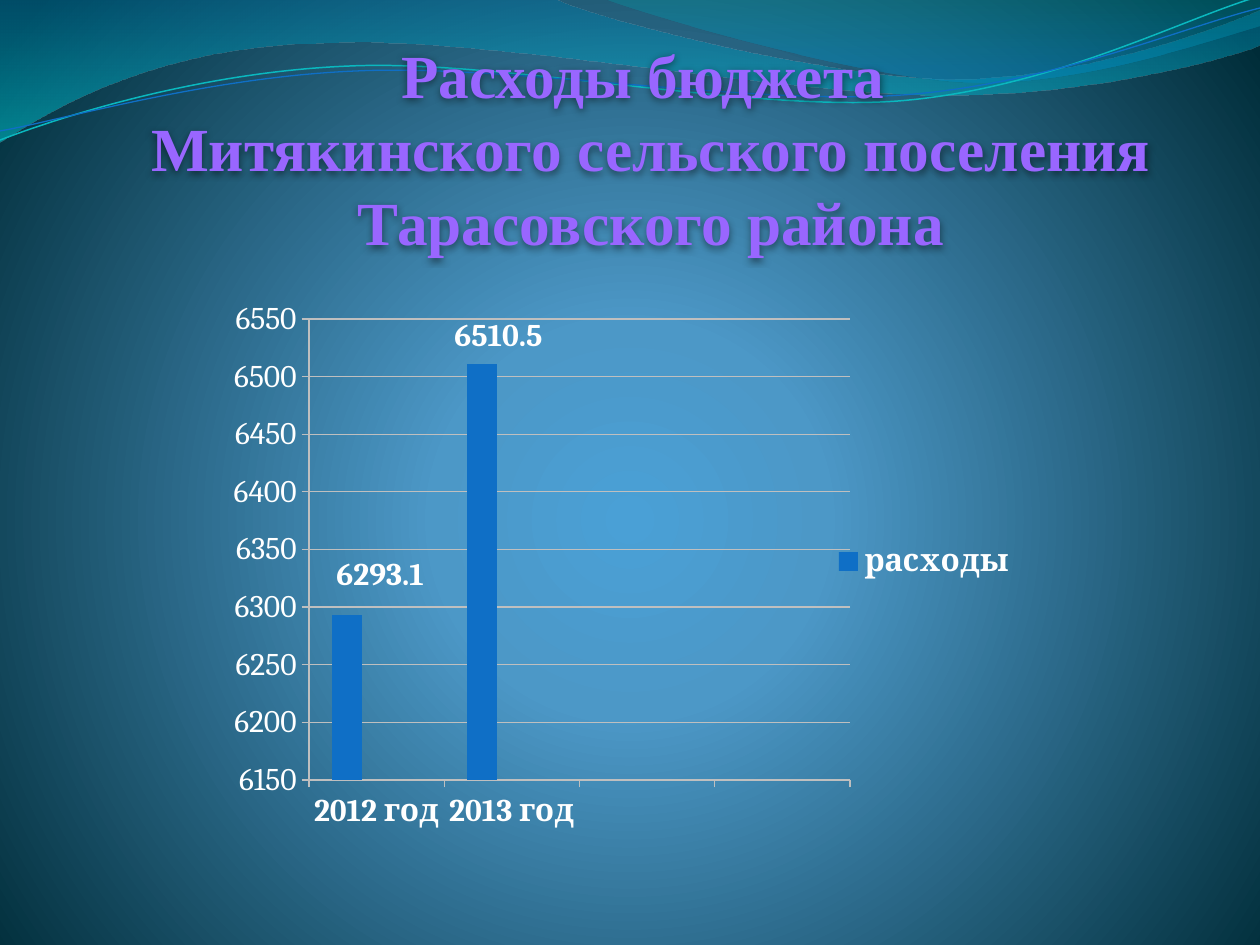
from lxml import etree
from pptx import Presentation
from pptx.chart.data import CategoryChartData
from pptx.dml.color import RGBColor
from pptx.enum.chart import XL_CHART_TYPE, XL_LABEL_POSITION, XL_LEGEND_POSITION, XL_TICK_MARK
from pptx.enum.text import MSO_ANCHOR, PP_ALIGN
from pptx.oxml import parse_xml
from pptx.oxml.ns import nsdecls, qn
from pptx.util import Pt

COLUMNS = XL_CHART_TYPE.COLUMN_CLUSTERED
OUTSIDE_END = XL_LABEL_POSITION.OUTSIDE_END
LEGEND_RIGHT = XL_LEGEND_POSITION.RIGHT
TICK_OUTSIDE = XL_TICK_MARK.OUTSIDE
CENTER = PP_ALIGN.CENTER
TOP = MSO_ANCHOR.TOP

PX = 914400 // 126
CHART_WIDTH, CHART_HEIGHT = 840, 559
COLORS = {
    "glow": "4AA0D6", "mid": "4C98C7", "edge": "002C38",
    "wave_blue": "0074A1", "wave_cyan": "00C6CF",
    "crest_teal": "00A1A9", "crest_blue": "008BBF",
    "thread_teal": "0AB8BF", "blue": "0F6FC6",
    "sky": "009DD9", "aqua": "0BD0D9",
    "title": "9966FF", "text": "FFFFFF", "grid": "BFBFBF", "shadow": "000000",
}

# Each step is a line end (2 numbers) or a cubic curve (6 numbers), in px
WAVE = [(0, 0), (554, -1), (600, 21, 837, 79, 955, 79), (1074, 79, 1207, 33, 1260, 11),
        (1261, 45), (1239, 55, 1096, 96, 940, 95), (784, 95, 481, 35, 324, 43),
        (163, 45, 58, 105, -1, 142)]
CREST = [(604, -1), (641, 14, 859, 78, 969, 82), (1079, 86, 1211, 40, 1260, 26), (1260, 0)]
TEAL_THREAD = [(0, 140), (60, 117, 199, 72, 349, 66), (498, 59, 747, 112, 898, 101),
               (1050, 89, 1182, 19, 1257, -3)]
BLUE_THREAD = [(0, 131), (59, 121, 207, 77, 357, 71), (508, 64, 752, 106, 903, 95),
               (1053, 84, 1186, 26, 1260, 8)]


def rgb(name):
    return RGBColor.from_string(COLORS[name])


def gradient_xml(stops, direction):
    """Stops are (position %, colour name, opacity %)."""
    marks = "".join(
        f'<a:gs pos="{pos * 1000}"><a:srgbClr val="{COLORS[name]}">'
        f'<a:alpha val="{opacity * 1000}"/></a:srgbClr></a:gs>'
        for pos, name, opacity in stops)
    return (f'<a:gradFill {nsdecls("a")} rotWithShape="1"><a:gsLst>{marks}</a:gsLst>'
            f'{direction}</a:gradFill>')


def set_background(slide):
    glow = gradient_xml(
        [(0, "glow", 100), (25, "mid", 100), (100, "edge", 100)],
        '<a:path path="circle"><a:fillToRect l="10000" t="110000" r="10000" b="100000"/></a:path>')
    background = parse_xml(f'<p:bg {nsdecls("p", "a")}><p:bgPr>{glow}<a:effectLst/></p:bgPr></p:bg>')
    slide.element.cSld.insert(0, background)


def add_outline(slide, steps, closed):
    """Lay out the end points, then bend the curved steps."""
    ends = [step[-2:] for step in steps]
    left, top = (min(axis) for axis in zip(*ends))
    builder = slide.shapes.build_freeform(*ends[0], scale=PX)
    builder.add_line_segments(ends[1:], close=closed)
    outline = builder.convert_to_shape()
    outline.shadow.inherit = False
    for segment, step in zip(list(outline.element.iter(qn("a:lnTo"))), steps[1:]):
        if len(step) == 6:
            segment.tag = qn("a:cubicBezTo")
            for i, (x, y) in enumerate([step[:2], step[2:4]]):
                handle = etree.Element(qn("a:pt"), x=str(x - left), y=str(y - top))
                segment.insert(i, handle)
    return outline


def add_wave(slide, steps, stops):
    wave = add_outline(slide, steps, True)
    wave.line.fill.background()
    wave.element.spPr.find(qn("a:custGeom")).addnext(
        parse_xml(gradient_xml(stops, '<a:lin ang="5400000" scaled="0"/>')))


def add_thread(slide, steps, color, width):
    thread = add_outline(slide, steps, False)
    thread.fill.background()
    thread.line.color.rgb = rgb(color)
    thread.line.width = Pt(width)


def add_title(slide, lines):
    title = slide.shapes.add_textbox(84 * PX, 31 * PX, 1134 * PX, 158 * PX)
    frame = title.text_frame
    frame.word_wrap = True
    frame.vertical_anchor = TOP
    frame.margin_top = 6 * PX
    frame.text = "\n".join(lines)
    for paragraph in frame.paragraphs:
        paragraph.alignment = CENTER
        style_font(paragraph.font, 35, "title", "Times New Roman", True)
    title.element.spPr.append(parse_xml(
        f'<a:effectLst {nsdecls("a")}><a:outerShdw blurRad="50800" dist="12700" dir="5400000">'
        f'<a:srgbClr val="{COLORS["shadow"]}"><a:alpha val="45000"/></a:srgbClr>'
        '</a:outerShdw></a:effectLst>'))


def style_font(font, size, color, name, bold):
    font.size = Pt(size)
    font.name = name
    font.bold = bold
    font.color.rgb = rgb(color)


def style_chart_font(font, bold=False):
    style_font(font, 18, "text", "Cambria", bold)


def style_rule(line):
    line.color.rgb = rgb("grid")
    line.width = Pt(0.75)


def style_axis(axis, bold):
    axis.major_tick_mark = TICK_OUTSIDE
    style_rule(axis.format.line)
    style_chart_font(axis.tick_labels.font, bold)


def manual_layout(**values):
    layout = etree.Element(qn("c:layout"))
    manual = etree.SubElement(layout, qn("c:manualLayout"))
    for tag, value in values.items():
        etree.SubElement(manual, qn(f"c:{tag}")).set("val", str(value))
    return layout


def label_expenses(series, nudges):
    labels = series.data_labels
    labels.show_value = True
    labels.position = OUTSIDE_END
    style_chart_font(labels.font, True)
    for index, (x, y) in enumerate(nudges):
        label = series.points[index].data_label
        style_chart_font(label.font, True)
        label.position = OUTSIDE_END
    dlbls = series.data_labels.font and series.points[0].data_label and series._element.find(qn("c:dLbls"))
    for mark, (x, y) in zip(dlbls.findall(qn("c:dLbl")), nudges):
        mark.find(qn("c:idx")).addnext(manual_layout(x=x, y=y))
    for leader in dlbls.findall(qn("c:showLeaderLines")):
        leader.set("val", "0")


def add_expense_chart(slide):
    data = CategoryChartData(number_format="General")
    data.categories = ["2012 год", "2013 год", "", ""]
    data.add_series("расходы", (6293.1, 6510.5, None, None))
    for name in ("Series 2", "Series 3"):
        data.add_series(name, (None,) * 4)
    chart = slide.shapes.add_chart(
        COLUMNS, 190 * PX, 282 * PX, CHART_WIDTH * PX, CHART_HEIGHT * PX, data).chart
    chart.has_title = False
    style_chart_font(chart.font)

    # The last two categories have no name
    for names in chart.element.iter(qn("c:cat")):
        for point in list(names.iter(qn("c:pt"))):
            if not point.findtext(qn("c:v")):
                point.getparent().remove(point)

    # Axes
    style_axis(chart.category_axis, True)
    amounts = chart.value_axis
    style_axis(amounts, False)
    amounts.minimum_scale, amounts.maximum_scale, amounts.major_unit = 6150, 6550, 50
    style_rule(amounts.major_gridlines.format.line)

    # Plot area
    plot = chart.plots[0]
    plot.gap_width, plot.overlap, plot.vary_by_categories = 150, 0, False
    area = chart.element.chart.plotArea
    for layout in area.findall(qn("c:layout")):
        area.remove(layout)
    area.insert(0, manual_layout(
        layoutTarget="inner", xMode="edge", yMode="edge",
        x=119 / CHART_WIDTH, y=37 / CHART_HEIGHT, w=541 / CHART_WIDTH, h=461 / CHART_HEIGHT))
    for series, color in zip(plot.series, ("blue", "sky", "aqua")):
        series.format.fill.solid()
        series.format.fill.fore_color.rgb = rgb(color)
    label_expenses(plot.series[0], [(0.04, -0.03), (0.02, -0.01)])

    # Legend lists the expenses only
    chart.has_legend = True
    legend = chart.legend
    legend.position = LEGEND_RIGHT
    legend.include_in_layout = False
    style_chart_font(legend.font, True)
    position = chart.element.chart.find(qn("c:legend")).find(qn("c:legendPos"))
    for hidden in (2, 1):
        position.addnext(parse_xml(
            f'<c:legendEntry {nsdecls("c")}><c:idx val="{hidden}"/><c:delete val="1"/></c:legendEntry>'))


def main():
    deck = Presentation()
    deck.slide_width, deck.slide_height = 1260 * PX, 945 * PX
    slide = deck.slides.add_slide(deck.slide_layouts[6])
    set_background(slide)
    add_wave(slide, WAVE, [(0, "wave_blue", 45), (100, "wave_cyan", 55)])
    add_wave(slide, CREST, [(0, "crest_teal", 30), (80, "crest_blue", 45)])
    add_thread(slide, TEAL_THREAD, "thread_teal", 0.85)
    add_thread(slide, BLUE_THREAD, "blue", 0.75)
    add_title(slide, ["Расходы бюджета ", "Митякинского сельского поселения Тарасовского района"])
    add_expense_chart(slide)
    deck.save("out.pptx")


if __name__ == "__main__":
    main()
